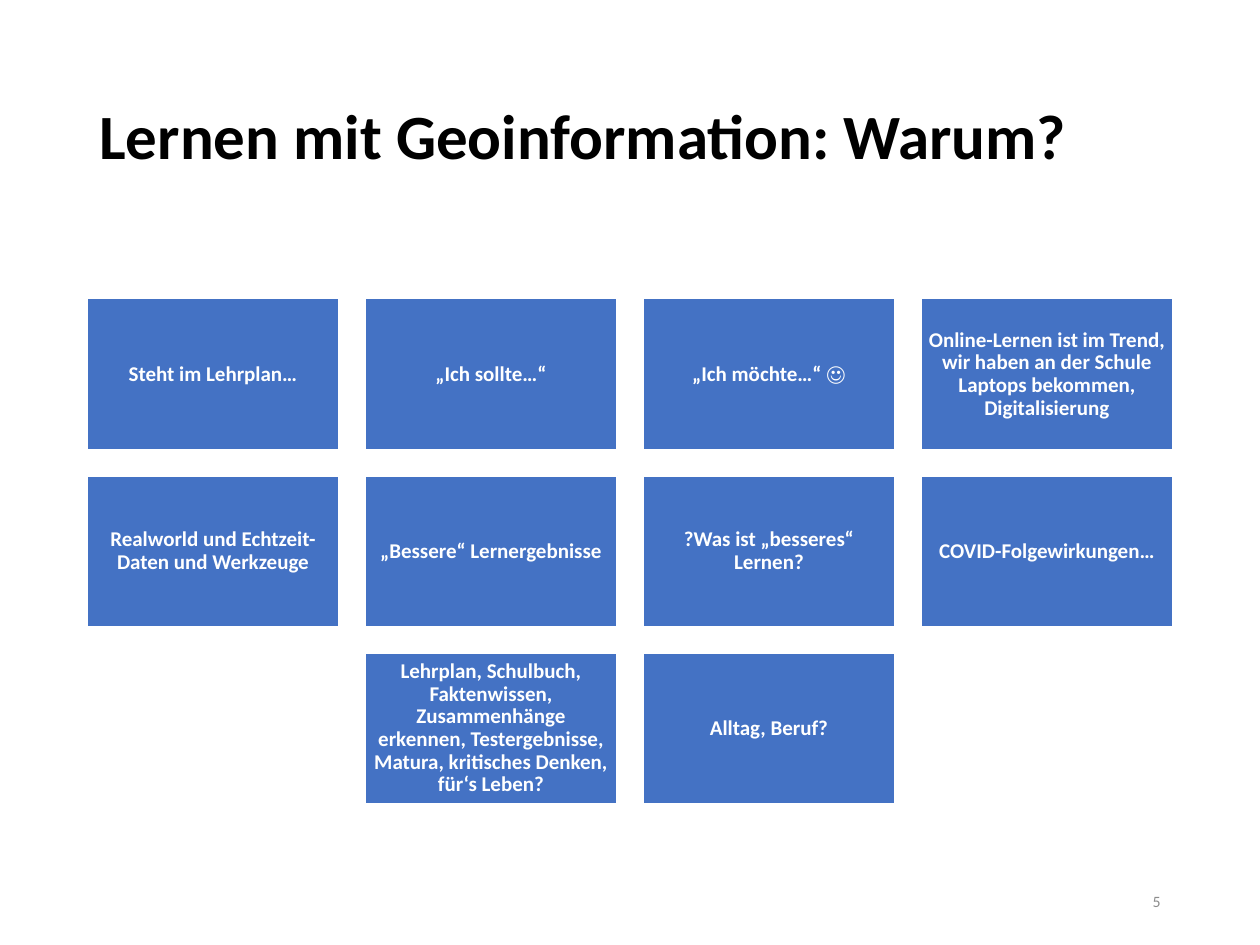
from pptx import Presentation
from pptx.dml.color import RGBColor
from pptx.enum.shapes import MSO_SHAPE
from pptx.enum.text import MSO_ANCHOR, PP_ALIGN
from pptx.util import Inches, Pt

COLORS = {"title": "000000", "card": "4472C4", "white": "FFFFFF", "number": "8C8C8C"}
FONT = "Calibri"
WIDTH, HEIGHT = 10, 7.5
MARGIN = 0.069 * WIDTH
CONTENT = WIDTH - 2 * MARGIN
COLUMNS = 4
GAP = 0.205

REASONS = [
    "Steht im Lehrplan…",
    "„Ich sollte…“",
    "„Ich möchte…“ ☺",
    "Online-Lernen ist im Trend, wir haben an der Schule Laptops bekommen, Digitalisierung",
    "Realworld und Echtzeit-Daten und Werkzeuge",
    "„Bessere“ Lernergebnisse",
    "?Was ist „besseres“ Lernen?",
    "COVID-Folgewirkungen…",
    "Lehrplan, Schulbuch, Faktenwissen, Zusammenhänge erkennen, "
    "Testergebnisse, Matura, kritisches Denken, für‘s Leben?",
    "Alltag, Beruf?",
]


def rgb(name):
    return RGBColor.from_string(COLORS[name])


def write(sp, text, size, color, align, bold=True, spacing=0.9, inset=None):
    tf = sp.text_frame
    frame = {"word_wrap": True, "vertical_anchor": MSO_ANCHOR.MIDDLE}
    if inset is not None:
        frame.update({f"margin_{side}": Inches(inset)
                      for side in ("left", "top", "right", "bottom")})
    p = tf.paragraphs[0]
    r = p.add_run()
    r.text = text
    r.font.color.rgb = rgb(color)
    formats = (
        (tf, frame),
        (p, {"alignment": align, "line_spacing": spacing}),
        (r.font, {"name": FONT, "size": Pt(size), "bold": bold}),
    )
    for target, values in formats:
        for name, value in values.items():
            setattr(target, name, value)


def add_title(s, box, text):
    sp = s.shapes.add_textbox(*map(Inches, box))
    write(sp, text, 36, "title", PP_ALIGN.LEFT)


def add_card(s, box, text):
    sp = s.shapes.add_shape(MSO_SHAPE.RECTANGLE, *map(Inches, box))
    sp.shadow.inherit = False
    sp.fill.solid()
    sp.fill.fore_color.rgb = rgb("card")
    sp.line.color.rgb = rgb("white")
    sp.line.width = Pt(1)
    write(sp, text, 12, "white", PP_ALIGN.CENTER, inset=0.05)


def add_card_grid(s, box, texts):
    left, top, width, height = box
    rows = [texts[i:i + COLUMNS] for i in range(0, len(texts), COLUMNS)]
    card_w = (width - GAP * (COLUMNS - 1)) / COLUMNS
    card_h = (height - GAP * (len(rows) - 1)) / len(rows)
    for i, row in enumerate(rows):
        # A short row is centred
        shift = (COLUMNS - len(row)) / 2
        for j, text in enumerate(row):
            x = left + (shift + j) * (card_w + GAP)
            y = top + i * (card_h + GAP)
            add_card(s, (x, y, card_w, card_h), text)


def add_page_number(s, box, number):
    sp = s.shapes.add_textbox(*map(Inches, box))
    write(sp, number, 9, "number", PP_ALIGN.RIGHT, bold=False, spacing=1.0)


def main():
    prs = Presentation()
    prs.slide_width, prs.slide_height = Inches(WIDTH), Inches(HEIGHT)
    s = prs.slides.add_slide(prs.slide_layouts[6])

    # Title
    add_title(s, (MARGIN, 0.04 * HEIGHT, CONTENT, 0.215 * HEIGHT),
              "Lernen mit Geoinformation: Warum?")
    # Reasons
    add_card_grid(s, (MARGIN, 0.316 * HEIGHT, CONTENT, 0.535 * HEIGHT), REASONS)
    # Page number
    number_w = 0.225 * WIDTH
    add_page_number(s, (WIDTH - MARGIN - number_w, 0.927 * HEIGHT,
                        number_w, 0.053 * HEIGHT), "5")

    prs.save("out.pptx")


if __name__ == "__main__":
    main()
